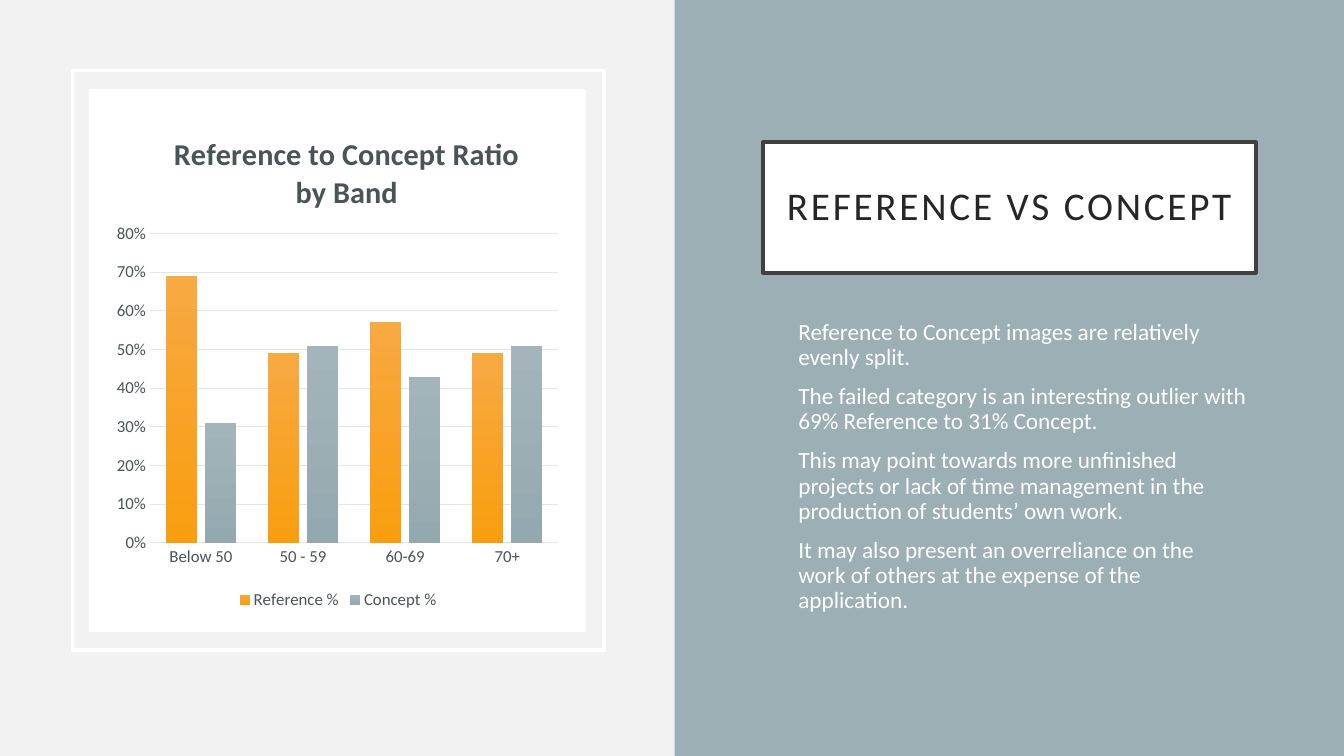
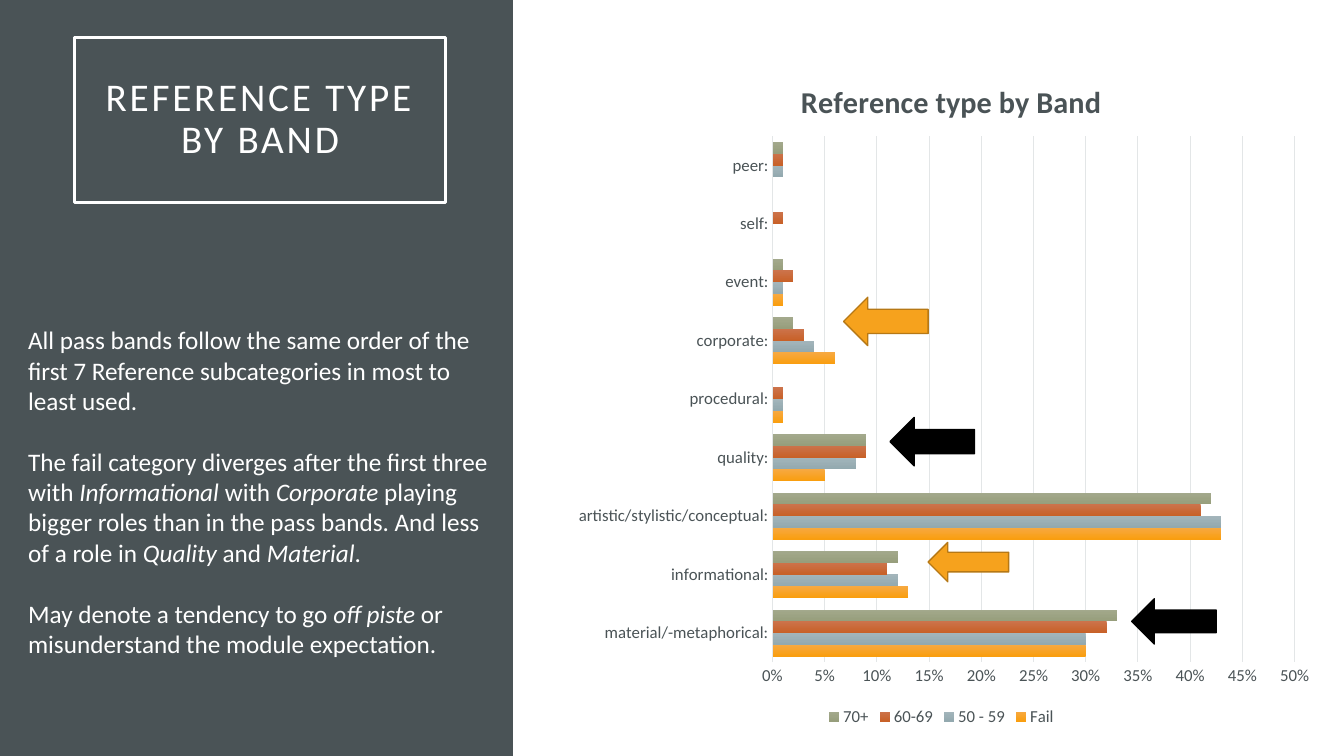
from pptx import Presentation
from pptx.chart.data import CategoryChartData
from pptx.dml.color import RGBColor
from pptx.enum.chart import XL_CHART_TYPE as CHART, XL_LEGEND_POSITION as LEGEND
from pptx.enum.chart import XL_TICK_MARK as TICK
from pptx.enum.shapes import MSO_SHAPE as SHAPE
from pptx.enum.text import MSO_ANCHOR as ANCHOR, PP_ALIGN as ALIGN
from pptx.oxml import parse_xml
from pptx.oxml.ns import nsdecls, qn
from pptx.util import Cm, Pt

FONT = "Calibri"
WIDTH, HEIGHT = 33.87, 19.05
WHITE = RGBColor(0xFF, 0xFF, 0xFF)
BLACK = RGBColor(0, 0, 0)
PALE = RGBColor(0xF2, 0xF2, 0xF2)
INK = RGBColor(0x26, 0x26, 0x26)
BORDER = RGBColor(0x40, 0x40, 0x40)
SLATE = RGBColor(0x4A, 0x53, 0x56)
MIST = RGBColor(0x9B, 0xAF, 0xB5)
GRID = RGBColor(0xE3, 0xE6, 0xE7)
AMBER = RGBColor(0xF6, 0xA2, 0x1D)
BROWN = RGBColor(0xB6, 0x78, 0x15)

# Top and bottom colours of the bar gradients
ORANGE_BAR = RGBColor(0xF7, 0xA9, 0x42), RGBColor(0xF9, 0x9E, 0x0F)
MIST_BAR = RGBColor(0xA3, 0xB5, 0xBB), RGBColor(0x93, 0xA9, 0xAF)
RUST_BAR = RGBColor(0xCC, 0x73, 0x4B), RGBColor(0xC8, 0x61, 0x28)
OLIVE_BAR = RGBColor(0xA3, 0xA9, 0x8C), RGBColor(0x97, 0x9E, 0x7C)


def style_font(font, size, color, bold=False):
    font.name, font.size, font.bold = FONT, Pt(size), bold
    font.color.rgb = color


def place(element, index, **fractions):
    """Give a chart part a fixed place, in fractions of the chart."""
    for old in element.findall(qn("c:layout")):
        element.remove(old)
    inner = '<c:layoutTarget val="inner"/>' if "w" in fractions else ""
    values = "".join(f'<c:{k} val="{v}"/>' for k, v in fractions.items())
    element.insert(index, parse_xml(
        f'<c:layout {nsdecls("c")}><c:manualLayout>{inner}'
        f'<c:xMode val="edge"/><c:yMode val="edge"/>{values}'
        '</c:manualLayout></c:layout>'))


class Deck:
    def __init__(self):
        self.prs = Presentation()
        self.prs.slide_width, self.prs.slide_height = Cm(WIDTH), Cm(HEIGHT)
        self.s = None

    def slide(self, background):
        self.s = self.prs.slides.add_slide(self.prs.slide_layouts[6])
        fill = self.s.background.fill
        fill.solid()
        fill.fore_color.rgb = background

    def shape(self, box, fill=None, line=None, weight=2.5, kind=SHAPE.RECTANGLE):
        sp = self.s.shapes.add_shape(kind, *map(Cm, box))
        sp.shadow.inherit = False
        if fill is None:
            sp.fill.background()
        else:
            sp.fill.solid()
            sp.fill.fore_color.rgb = fill
        if line is None:
            sp.line.fill.background()
        else:
            sp.line.color.rgb = line
            sp.line.width = Pt(weight)
        return sp

    def title(self, box, text, color, fill, line):
        tf = self.shape(box, fill, line).text_frame
        tf.word_wrap = True
        tf.vertical_anchor = ANCHOR.MIDDLE
        tf.margin_left = tf.margin_right = Cm(0.5)
        tf.margin_top = tf.margin_bottom = Cm(0.5)
        p = tf.paragraphs[0]
        p.text = text
        p.alignment = ALIGN.CENTER
        p.line_spacing = 0.9
        style_font(p.font, 28, color)
        p.runs[0].font._element.set("spc", "200")

    def body(self, box, texts, size, gap, spacing=1.0, anchor=ANCHOR.TOP, indent=0.25):
        """Write white paragraphs; words between asterisks are italic."""
        tf = self.s.shapes.add_textbox(*map(Cm, box)).text_frame
        tf.word_wrap = True
        tf.vertical_anchor = anchor
        tf.margin_left = Cm(indent)
        for i, text in enumerate(texts):
            p = tf.add_paragraph() if i else tf.paragraphs[0]
            p.line_spacing = spacing
            p.space_before = Pt(gap if i else 0)
            style_font(p.font, size, WHITE)
            for j, part in enumerate(text.split("*")):
                r = p.add_run()
                r.text = part
                if j % 2:
                    r.font.italic = True

    def chart(self, box, kind, title, cats, series, top, step, overlap, title_at, plot_at):
        data = CategoryChartData(number_format="0%")
        data.categories = cats
        for name, _, values in series:
            data.add_series(name, values)
        chart = self.s.shapes.add_chart(kind, *map(Cm, box), data).chart
        style_font(chart.font, 12, SLATE)

        chart.has_title = True
        tf = chart.chart_title.text_frame
        tf.text = title
        style_font(tf.paragraphs[0].font, 21.6, SLATE, bold=True)
        place(chart.chart_title._element, 1, **title_at)
        place(chart._chartSpace.chart.plotArea, 0, **plot_at)

        chart.has_legend = True
        chart.legend.position = LEGEND.BOTTOM
        chart.legend.include_in_layout = False
        style_font(chart.legend.font, 12, SLATE)

        cat, val = chart.category_axis, chart.value_axis
        for axis in (cat, val):
            axis.major_tick_mark = axis.minor_tick_mark = TICK.NONE
            style_font(axis.tick_labels.font, 12, SLATE)
        val.minimum_scale, val.maximum_scale, val.major_unit = 0, top, step
        val.tick_labels.number_format = "0%"
        val.tick_labels.number_format_is_linked = False
        val.format.line.fill.background()
        val.has_major_gridlines = True
        for line in (cat.format.line, val.major_gridlines.format.line):
            line.color.rgb = GRID
            line.width = Pt(0.75)

        plot = chart.plots[0]
        plot.gap_width, plot.overlap = 100, overlap
        plot.vary_by_categories = False
        for bars, (_, colors, _) in zip(plot.series, series):
            fill = bars.format.fill
            fill.gradient()
            fill.gradient_angle = 270
            for stop, color in zip(fill.gradient_stops, colors):
                stop.color.rgb = color
            bars.invert_if_negative = False


def reference_vs_concept(deck):
    deck.slide(PALE)
    deck.shape((17, 0, WIDTH - 17, HEIGHT), MIST)
    deck.title((19.23, 3.58, 12.42, 3.3), "REFERENCE VS CONCEPT", INK, WHITE, BORDER)
    deck.shape((1.83, 1.78, 13.39, 14.6), line=WHITE)
    deck.shape((2.24, 2.24, 12.52, 13.69), WHITE)
    deck.body((19.23, 7.95, 12.42, 8.46), [
        "Reference to Concept images are relatively evenly split.",
        "The failed category is an interesting outlier with 69% Reference to 31% Concept.",
        "This may point towards more unfinished projects or lack of time management "
        "in the production of students’ own work.",
        "It may also present an overreliance on the work of others at the expense "
        "of the application.",
    ], size=16.6, gap=10, spacing=0.9, indent=0.89)
    deck.chart(
        (2.74, 2.69, 11.56, 12.78), CHART.COLUMN_CLUSTERED,
        "Reference to Concept Ratio by Band",
        ["Below 50", "50 - 59", "60-69", "70+"],
        [("Reference %", ORANGE_BAR, (0.69, 0.49, 0.57, 0.49)),
         ("Concept %", MIST_BAR, (0.31, 0.51, 0.43, 0.51))],
        top=0.8, step=0.1, overlap=-24,
        title_at=dict(x=0.13, y=0.04),
        plot_at=dict(x=0.09, y=0.25, w=0.89, h=0.61))


def reference_type_by_band(deck):
    deck.slide(WHITE)
    deck.shape((0, 0, 12.93, HEIGHT), SLATE)
    deck.title((1.88, 0.94, 9.35, 4.17), "REFERENCE TYPE BY BAND", WHITE, None, WHITE)
    deck.chart(
        (14.05, 1.19, 19.35, 17.22), CHART.BAR_CLUSTERED, "Reference type by Band",
        ["material/-metaphorical:", "informational:", "artistic/stylistic/conceptual:",
         "quality:", "procedural:", "corporate:", "event:", "self:", "peer:"],
        [("Fail", ORANGE_BAR, (0.3, 0.13, 0.43, 0.05, 0.01, 0.06, 0.01, 0, 0)),
         ("50 - 59", MIST_BAR, (0.3, 0.12, 0.43, 0.08, 0.01, 0.04, 0.01, 0, 0.01)),
         ("60-69", RUST_BAR, (0.32, 0.11, 0.41, 0.09, 0.01, 0.03, 0.02, 0.01, 0.01)),
         ("70+", OLIVE_BAR, (0.33, 0.12, 0.42, 0.09, 0, 0.02, 0.01, 0, 0.01))],
        top=0.5, step=0.05, overlap=0,
        title_at=dict(x=0.31, y=0.04),
        plot_at=dict(x=0.28, y=0.13, w=0.68, h=0.77))
    deck.body((0.46, 8.03, 12.19, 8.71), [
        "All pass bands follow the same order of the first 7 Reference subcategories "
        "in most to least used.",
        "The fail category diverges after the first three with *Informational *with "
        "*Corporate *playing bigger roles than in the pass bands. And less of a role "
        "in *Quality *and *Material*.",
        "May denote a tendency to go *off piste *or misunderstand the module expectation.",
    ], size=18, gap=22, anchor=ANCHOR.MIDDLE)
    for box, fill, line in (
            ((23.39, 13.67, 2.03, 0.99), AMBER, BROWN),
            ((21.26, 7.49, 2.13, 1.22), AMBER, BROWN),
            ((22.43, 10.52, 2.13, 1.22), BLACK, BLACK),
            ((28.52, 15.09, 2.13, 1.14), BLACK, BLACK)):
        deck.shape(box, fill, line, weight=1, kind=SHAPE.LEFT_ARROW)


def main():
    deck = Deck()
    reference_vs_concept(deck)
    reference_type_by_band(deck)
    deck.prs.save("out.pptx")


if __name__ == "__main__":
    main()
